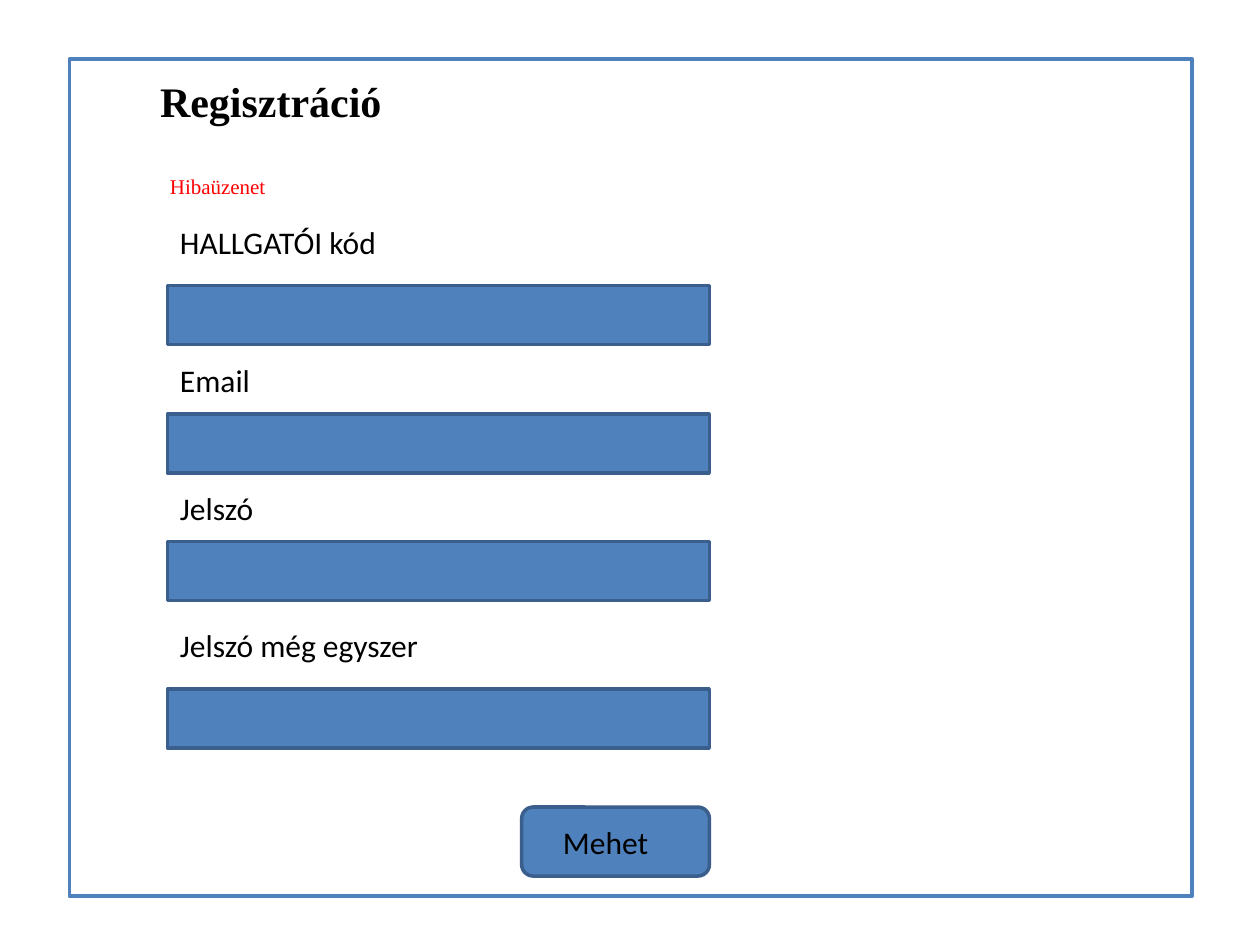
"""Build the wireframe slide of a registration form."""
from pptx import Presentation
from pptx.dml.color import RGBColor
from pptx.enum.shapes import MSO_SHAPE
from pptx.enum.text import MSO_ANCHOR, MSO_AUTO_SIZE, PP_ALIGN
from pptx.util import Inches, Pt

BLUE = RGBColor(0x4F, 0x81, 0xBD)
NAVY = RGBColor(0x3A, 0x5F, 0x8C)
BLACK = RGBColor(0, 0, 0)
RED = RGBColor(0xFF, 0, 0)

prs = Presentation()
prs.slide_width, prs.slide_height = Inches(10), Inches(7.5)
COL, ROW = prs.slide_width / 100, prs.slide_height / 100
LEFT, FIELD_W, FIELD_H = 13.3, 43, 6.25
s = prs.slides.add_slide(prs.slide_layouts[5])


def add_box(kind, x, y, w, h, line, fill=None):
    sp = s.shapes.add_shape(kind, int(x * COL), int(y * ROW), int(w * COL), int(h * ROW))
    sp.shadow.inherit = False
    if fill is None:
        sp.fill.background()
    else:
        sp.fill.solid()
        sp.fill.fore_color.rgb = fill
    sp.line.color.rgb = line
    sp.line.width = Pt(2)


def add_text(text, x, y, w, h, size=18, font="Calibri", color=BLACK, bold=False, sp=None):
    sp = sp or s.shapes.add_textbox(0, 0, 0, 0)
    sp.left, sp.top, sp.width, sp.height = int(x * COL), int(y * ROW), int(w * COL), int(h * ROW)
    tf = sp.text_frame
    tf.word_wrap = True
    tf.auto_size = MSO_AUTO_SIZE.NONE
    tf.vertical_anchor = MSO_ANCHOR.TOP
    p = tf.paragraphs[0]
    p.alignment = PP_ALIGN.LEFT
    r = p.add_run()
    r.text = text
    r.font.size, r.font.name, r.font.bold = Pt(size), font, bold
    r.font.color.rgb = color


add_box(MSO_SHAPE.RECTANGLE, 5.5, 6.25, 89.1, 88.6, BLUE)
add_text("Regisztráció", 11.7, 7.3, 21.9, 6.7, 24, "Times New Roman", bold=True, sp=s.shapes.title)
add_text("Hibaüzenet", 12.5, 17.7, 43.8, 4, 12, "Times New Roman", RED)

fields = [
    ("HALLGATÓI kód", 22.9, 30.2),
    ("Email", 37.5, 43.8),
    ("Jelszó", 51.1, 57.3),
    ("Jelszó még egyszer", 65.6, 72.9),
]
for label, label_y, field_y in fields:
    add_box(MSO_SHAPE.RECTANGLE, LEFT, field_y, FIELD_W, FIELD_H, NAVY, BLUE)
    add_text(label, LEFT, label_y, 32, 5.4)

add_box(MSO_SHAPE.ROUNDED_RECTANGLE, 41.4, 85.4, 14.9, 7.3, NAVY, BLUE)
add_text("Mehet", 43.7, 86.4, 9.4, 5.4)

prs.save("out.pptx")
